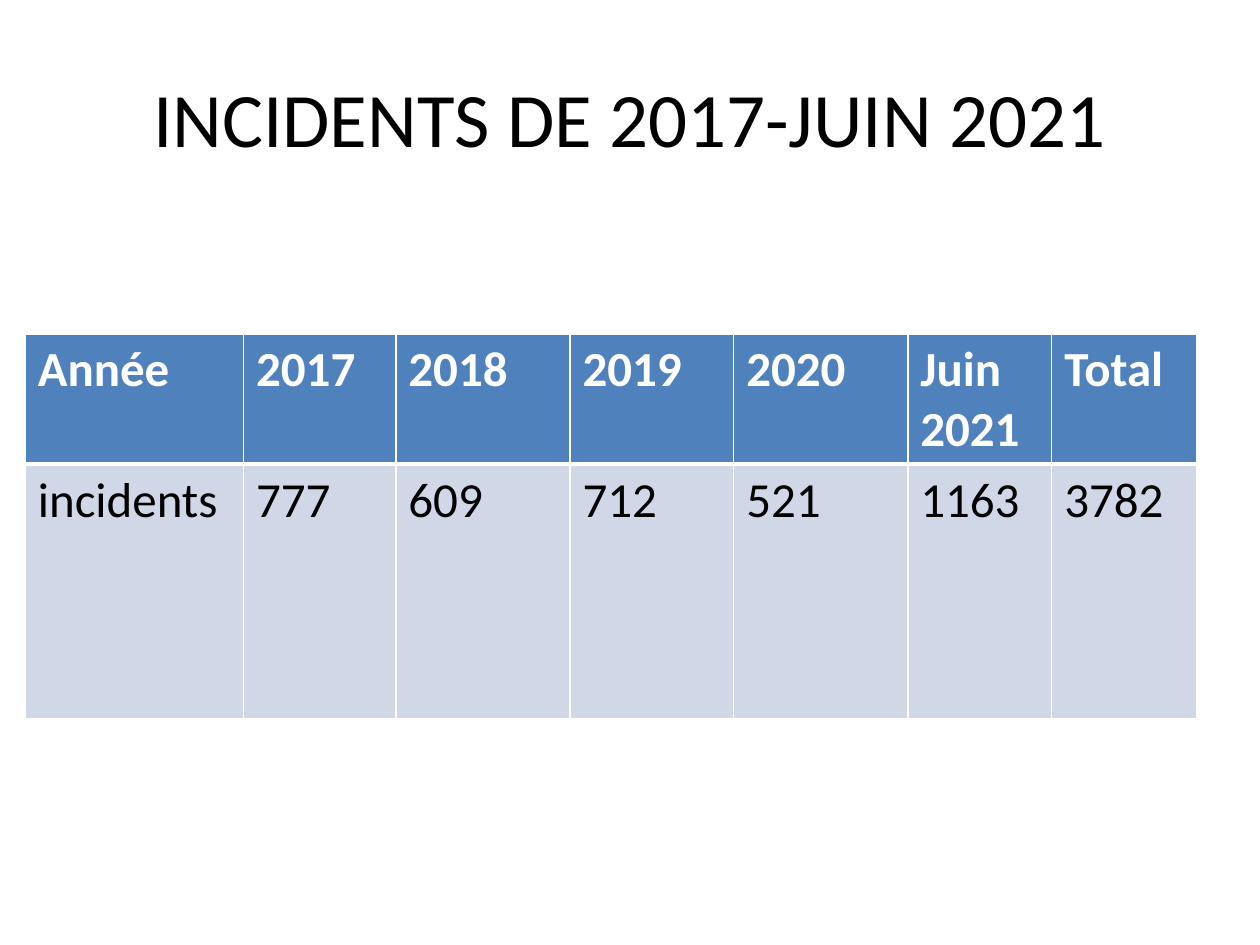
from lxml.etree import SubElement
from pptx import Presentation
from pptx.dml.color import RGBColor
from pptx.enum.text import MSO_ANCHOR, PP_ALIGN
from pptx.oxml.ns import qn
from pptx.util import Cm, Pt

COLOURS = {"header": "4F81BD", "body": "D0D8E8", "white": "FFFFFF", "black": "000000"}
FONT = "Calibri"
INCIDENTS = [
    ("Année", "2017", "2018", "2019", "2020", "Juin 2021", "Total"),
    ("incidents", "777", "609", "712", "521", "1163", "3782"),
]
COLUMN_WIDTHS = [4.4, 3.07, 3.51, 3.3, 3.51, 2.9, 2.92]
ROW_HEIGHTS = [2.62, 5.13]


def style_text(paragraph, size, colour, bold=False):
    font = paragraph.font
    font.name = FONT
    font.size = Pt(size)
    font.bold = bold
    font.color.rgb = RGBColor.from_string(COLOURS[colour])


def add_border(cell, side, width):
    line = SubElement(cell._tc.get_or_add_tcPr(), qn(f"a:{side}"), w=str(Pt(width)))
    fill = SubElement(line, qn("a:solidFill"))
    SubElement(fill, qn("a:srgbClr"), val=COLOURS["white"])


presentation = Presentation()
presentation.slide_width = Cm(25.4)
presentation.slide_height = Cm(19.05)
slide = presentation.slides.add_slide(presentation.slide_layouts[6])

title = slide.shapes.add_textbox(Cm(1.27), Cm(0.76), Cm(22.86), Cm(3.18)).text_frame
title.word_wrap = True
title.vertical_anchor = MSO_ANCHOR.MIDDLE
heading = title.paragraphs[0]
heading.text = "INCIDENTS DE 2017-JUIN 2021"
heading.alignment = PP_ALIGN.CENTER
style_text(heading, 44, "black")

yearly_counts = slide.shapes.add_table(
    len(INCIDENTS), len(COLUMN_WIDTHS), Cm(0.51), Cm(6.73),
    Cm(sum(COLUMN_WIDTHS)), Cm(sum(ROW_HEIGHTS)),
).table
for column, width in zip(yearly_counts.columns, COLUMN_WIDTHS):
    column.width = Cm(width)
for row, height in zip(yearly_counts.rows, ROW_HEIGHTS):
    row.height = Cm(height)

for row_index, values in enumerate(INCIDENTS):
    is_header = row_index == 0
    borders = {"lnL": 1, "lnR": 1, "lnT": 1 if is_header else 3, "lnB": 3 if is_header else 1}
    for column_index, value in enumerate(values):
        cell = yearly_counts.cell(row_index, column_index)
        cell.text = value
        style_text(cell.text_frame.paragraphs[0], 28, "white" if is_header else "black", is_header)
        for side, width in borders.items():
            add_border(cell, side, width)
        cell.fill.solid()
        cell.fill.fore_color.rgb = RGBColor.from_string(COLOURS["header" if is_header else "body"])

presentation.save("out.pptx")
